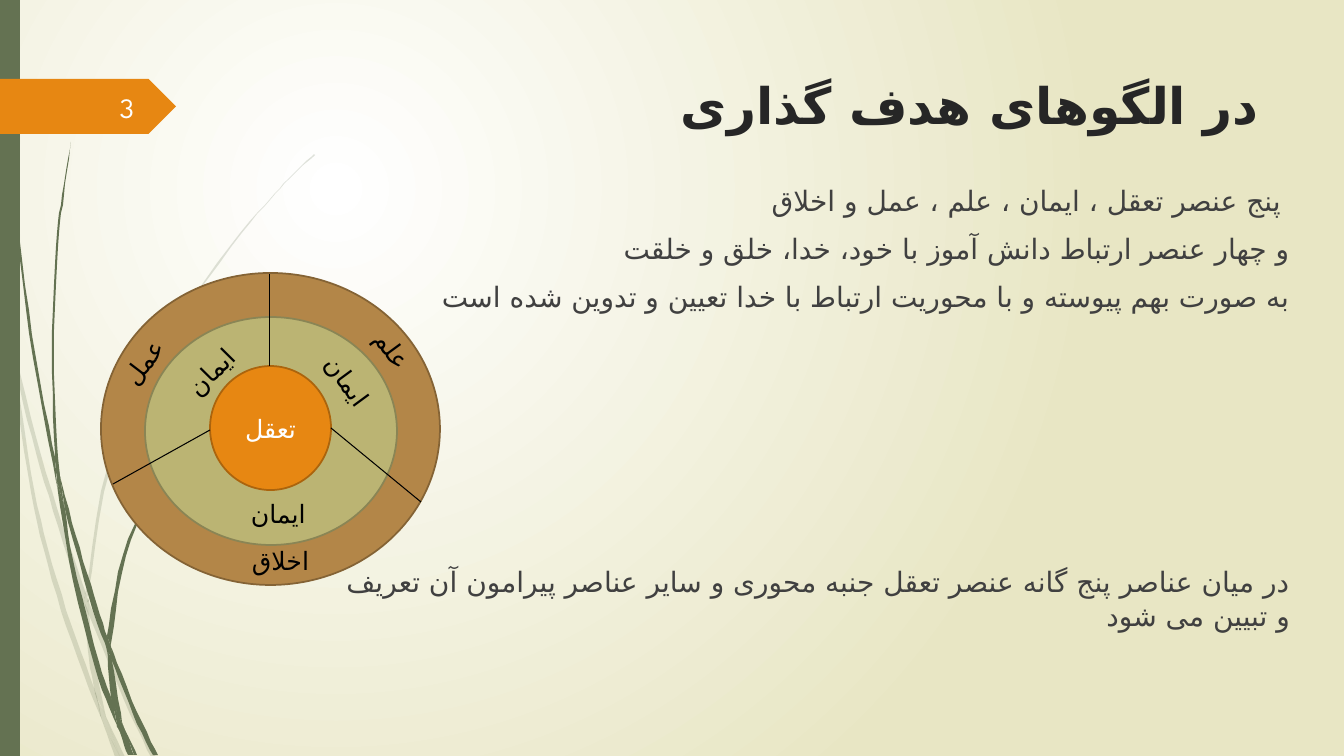
from lxml.etree import SubElement
from pptx import Presentation
from pptx.dml.color import RGBColor
from pptx.enum.shapes import MSO_CONNECTOR, MSO_SHAPE
from pptx.enum.text import MSO_ANCHOR, PP_ALIGN
from pptx.oxml import parse_xml
from pptx.oxml.ns import nsdecls, qn
from pptx.util import Emu, Pt

W, H = 1344, 756
SCALE = 12192000 / W
HEAD, BODY, PERSIAN = "League Spartan", "Roboto", "DejaVu Sans"

WHITE = RGBColor(0xFF, 0xFF, 0xFF)
CREAM = RGBColor(0xE8, 0xE6, 0xC4)
GREEN = RGBColor(0x64, 0x72, 0x52)
ORANGE = RGBColor(0xE7, 0x87, 0x12)
ORANGE_EDGE = RGBColor(0xAB, 0x64, 0x0D)
BROWN = RGBColor(0xB3, 0x86, 0x48)
BROWN_EDGE = RGBColor(0x84, 0x63, 0x35)
OLIVE = RGBColor(0xBB, 0xB4, 0x73)
OLIVE_EDGE = RGBColor(0x8A, 0x85, 0x55)
BLACK = RGBColor(0, 0, 0)
TITLE_INK = RGBColor(0x26, 0x26, 0x26)
BODY_INK = RGBColor(0x40, 0x40, 0x40)
NUMBER_INK = RGBColor(0xFE, 0xFF, 0xFF)

PALE_BLADES = [
    ([(0, 284), (9, 325), (11, 353)], [(10, 347), (0, 301)]),
    ([(14, 348), (36, 437), (62, 524), (85, 591)], [(84, 604), (58, 526), (36, 453), (17, 379)]),
    ([(89, 601), (93, 612), (128, 698), (156, 757)], [(151, 757), (124, 700), (89, 615)]),
    ([(106, 717), (125, 757)], [(120, 757)]),
    ([(11, 353), (17, 379), (31, 473), (48, 549), (71, 624), (94, 688), (102, 720)],
     [(93, 699), (66, 626), (44, 550), (28, 474), (11, 353)]),
    ([(85, 604), (88, 651), (94, 688), (97, 698), (106, 717)], [(92, 651), (89, 615), (85, 604)]),
    ([(314, 154), (291, 176), (270, 199), (230, 246), (159, 351), (108, 465), (86, 589), (86, 591)],
     [(89, 601), (89, 589), (111, 466), (161, 352), (231, 247), (270, 200), (292, 176), (315, 155)]),
    ([(102, 720), (115, 757)], [(120, 757)]),
    ([(85, 591), (89, 601)], [(89, 615), (84, 604)]),
    ([(94, 688), (100, 713), (102, 720), (120, 757)], [(106, 717), (97, 698)]),
]
DARK_BLADES = [
    ([(3, 0), (4, 48), (7, 111), (17, 235), (33, 358), (56, 481), (57, 485)],
     [(55, 457), (36, 358), (19, 234), (8, 110), (5, 48), (4, 0)]),
    ([(60, 476), (76, 536), (94, 595), (107, 636)], [(107, 650), (89, 597), (65, 509)]),
    ([(111, 646), (114, 654), (137, 712), (158, 755)], [(153, 755), (133, 714), (112, 661)]),
    ([(57, 481), (69, 561), (94, 664), (112, 714), (118, 728)],
     [(117, 723), (111, 697), (99, 662), (73, 560), (65, 509)]),
    ([(71, 142), (62, 195), (56, 247), (52, 352), (55, 453), (60, 476)],
     [(58, 457), (54, 352), (58, 247), (64, 195), (71, 142)]),
    ([(123, 725), (137, 755)], [(134, 755)]),
    ([(55, 453), (60, 476), (65, 509)], [(57, 481), (55, 457)]),
    ([(262, 347), (247, 361), (233, 376), (206, 408), (157, 478), (123, 555), (107, 636)],
     [(111, 646), (112, 638), (126, 556), (159, 480), (207, 409), (233, 377), (247, 362), (262, 347)]),
    ([(118, 728), (128, 755)], [(132, 755)]),
    ([(107, 650), (111, 697), (117, 712), (123, 725)], [(122, 722), (112, 661), (110, 656)]),
    ([(107, 636), (111, 646), (112, 661)], [(110, 656), (107, 650)]),
    ([(111, 697), (117, 723), (118, 728), (131, 755)], [(134, 755), (123, 725), (117, 712)]),
]
RINGS = [
    (101, 273, 339, 312, BROWN, BROWN_EDGE),
    (145, 317, 252, 228, OLIVE, OLIVE_EDGE),
    (210, 366, 121, 124, ORANGE, ORANGE_EDGE),
]
SPOKES = [(331, 428, 421, 502), (270, 274, 270, 366), (113, 484, 210, 430)]
RING_LABELS = [
    ("ایمان", 307, 367, 90, 53.7),
    ("ایمان", 241, 493, 90, 0),
    ("ایمان", 171, 346, 90, 314.6),
    ("عمل", 101, 326, 108, 307.4),
    ("اخلاق", 242, 540, 108, 0),
    ("علم", 353, 349, 108, 53.8),
]
BODY_LINES = [
    (" پنج عنصر تعقل ، ایمان ، علم ، عمل و اخلاق", 10),
    ("و چهار عنصر ارتباط دانش آموز با خود، خدا، خلق و خلقت", 10),
    ("به صورت بهم پیوسته و با محوریت ارتباط با خدا تعیین و تدوین شده است", 10),
    ("در میان عناصر پنج گانه عنصر تعقل جنبه محوری و سایر عناصر پیرامون آن تعریف و تبیین می شود", 180),
]


def px(*values):
    return [Emu(round(v * SCALE)) for v in values]


def paint_background(s):
    s.background.fill.gradient()
    grad = s.background._cSld.find(".//" + qn("a:gradFill"))
    grad.getparent().replace(grad, parse_xml(
        f'<a:gradFill {nsdecls("a")} rotWithShape="1"><a:gsLst>'
        f'<a:gs pos="0"><a:srgbClr val="{WHITE}"/></a:gs>'
        f'<a:gs pos="100000"><a:srgbClr val="{CREAM}"/></a:gs></a:gsLst>'
        '<a:path path="circle"><a:fillToRect l="50000" t="50000" r="100000" b="100000"/>'
        '</a:path></a:gradFill>'))


def paint(sp, fill, edge=None):
    sp.shadow.inherit = False
    sp.fill.solid()
    sp.fill.fore_color.rgb = fill
    if edge is None:
        sp.line.fill.background()
    else:
        sp.line.color.rgb = edge
        sp.line.width = Pt(1.25)


def add_shape(s, kind, x, y, w, h, fill, edge=None):
    sp = s.shapes.add_shape(kind, *px(x, y, w, h))
    paint(sp, fill, edge)
    return sp


def smooth(side, steps=5):
    padded = [side[0], *side, side[-1]]
    points = [side[0]]
    for a, b, c, d in zip(padded, padded[1:], padded[2:], padded[3:]):
        for t in (n / steps for n in range(1, steps + 1)):
            points.append(tuple(
                q + t / 2 * (r - p + t * (2 * p - 5 * q + 4 * r - e + t * (3 * (q - r) + e - p)))
                for p, q, r, e in zip(a, b, c, d)))
    return points


def add_blade(s, sides, opacity=100):
    points = [point for side in sides for point in smooth(side)]
    builder = s.shapes.build_freeform(*points[0], scale=SCALE)
    builder.add_line_segments(points[1:], close=True)
    sp = builder.convert_to_shape()
    paint(sp, GREEN)
    if opacity < 100:
        color = sp._element.spPr.find(".//" + qn("a:srgbClr"))
        SubElement(color, qn("a:alpha")).set("val", str(opacity * 1000))


def add_spoke(s, x1, y1, x2, y2):
    c = s.shapes.add_connector(MSO_CONNECTOR.STRAIGHT, *px(x1, y1, x2, y2))
    c.line.color.rgb = BLACK
    c.line.width = Pt(0.75)
    SubElement(c._element.spPr, qn("a:effectLst"))


def write(p, text, size, color, font=HEAD, bold=False, align=PP_ALIGN.LEFT, rtl=False):
    p.text = text
    p.alignment = align
    if rtl:
        p._p.get_or_add_pPr().set("rtl", "1")
    for r in p.runs:
        r.font.size = Pt(size)
        r.font.name = font
        r.font.bold = bold
        r.font.color.rgb = color
        SubElement(r._r.rPr, qn("a:cs")).set("typeface", PERSIAN)


def add_box(s, x, y, w, h, anchor=MSO_ANCHOR.TOP):
    sp = s.shapes.add_textbox(*px(x, y, w, h))
    sp.text_frame.word_wrap = True
    sp.text_frame.vertical_anchor = anchor
    return sp


def add_body(s):
    tf = add_box(s, 318, 179, 982, 529).text_frame
    for i, (text, gap) in enumerate(BODY_LINES):
        p = tf.add_paragraph() if i else tf.paragraphs[0]
        write(p, text, 20, BODY_INK, BODY, align=PP_ALIGN.RIGHT, rtl=True)
        p.space_before = Pt(gap)


def add_wheel(s):
    for ring in RINGS:
        core = add_shape(s, MSO_SHAPE.OVAL, *ring)
    core.text_frame.vertical_anchor = MSO_ANCHOR.MIDDLE
    write(core.text_frame.paragraphs[0], "تعقل", 18, WHITE, align=PP_ALIGN.CENTER)
    for spoke in SPOKES:
        add_spoke(s, *spoke)
    for text, x, y, w, angle in RING_LABELS:
        sp = add_box(s, x, y, w, 40)
        sp.rotation = angle
        write(sp.text_frame.paragraphs[0], text, 18, BLACK)


def main():
    prs = Presentation()
    prs.slide_width, prs.slide_height = px(W, H)
    s = prs.slides.add_slide(prs.slide_layouts[6])
    paint_background(s)
    for blades, opacity in ((PALE_BLADES, 20), (DARK_BLADES, 100)):
        for sides in blades:
            add_blade(s, sides, opacity)
    add_shape(s, MSO_SHAPE.RECTANGLE, 0, 0, 20, H, GREEN)
    add_shape(s, MSO_SHAPE.PENTAGON, 0, 79, 176, 55, ORANGE)
    title = add_box(s, 286, 69, 983, 141)
    write(title.text_frame.paragraphs[0], "در الگوهای هدف گذاری", 36, TITLE_INK,
          bold=True, align=PP_ALIGN.RIGHT, rtl=True)
    add_body(s)
    add_wheel(s)
    number = add_box(s, 58, 87, 86, 40, MSO_ANCHOR.MIDDLE)
    write(number.text_frame.paragraphs[0], "3", 20, NUMBER_INK, align=PP_ALIGN.RIGHT)
    prs.save("out.pptx")


if __name__ == "__main__":
    main()
